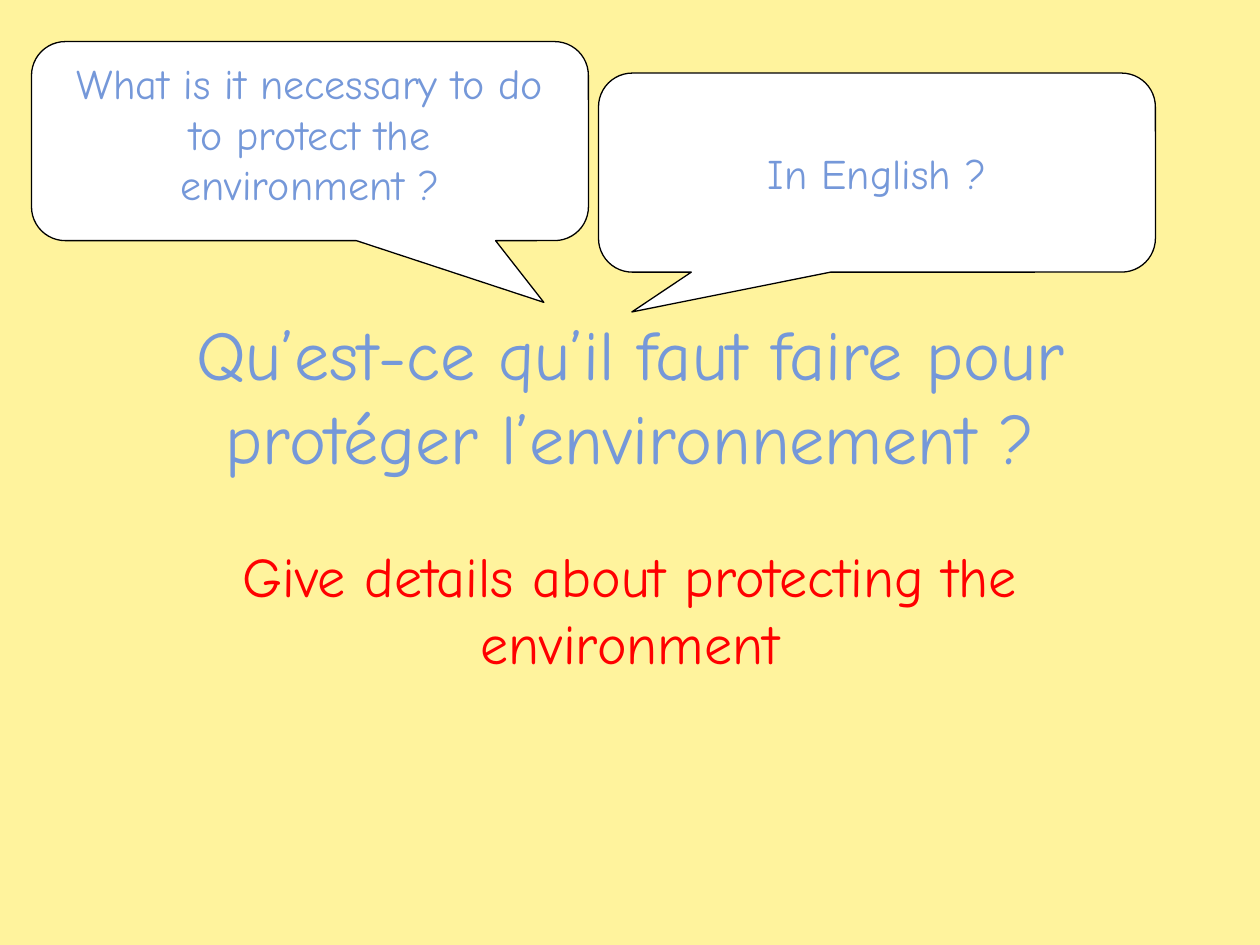
from pptx import Presentation
from pptx.dml.color import RGBColor
from pptx.enum import shapes, text
from pptx.util import Inches, Pt

BLUE, RED = "7598D9", "FF0000"


def rgb(value):
    return RGBColor.from_string(value)


def write(frame, words, size, color, anchor):
    frame.word_wrap = True
    frame.auto_size = text.MSO_AUTO_SIZE.NONE
    frame.vertical_anchor = anchor
    paragraph = frame.paragraphs[0]
    paragraph.alignment = text.PP_ALIGN.CENTER
    run = paragraph.add_run()
    run.text = words
    run.font.name = "Comic Neue"
    run.font.size = Pt(size)
    run.font.color.rgb = rgb(color)


prs = Presentation()
prs.slide_width, prs.slide_height = Inches(10), Inches(7.5)
slide = prs.slides.add_slide(prs.slide_layouts[5])

# Background
slide.background.fill.solid()
slide.background.fill.fore_color.rgb = rgb("FFF39D")

# Question in French
question = slide.shapes.title
question.left, question.top = Inches(0.75), Inches(2.33)
question.width, question.height = Inches(8.5), Inches(1.61)
write(question.text_frame, "Qu’est-ce qu’il faut faire pour protéger l’environnement ?",
      40, BLUE, text.MSO_ANCHOR.MIDDLE)

# Topic below the question
topic = slide.shapes.add_textbox(Inches(1.5), Inches(4.25), Inches(7), Inches(1.92))
write(topic.text_frame, "Give details about protecting the environment",
      32, RED, text.MSO_ANCHOR.TOP)

# Speech bubbles: left, top, tail position, anchor, words
bubbles = [
    (0.25, 0.33, (0.42, 0.81), text.MSO_ANCHOR.TOP,
     "What is it necessary to do to protect the environment ?"),
    (4.75, 0.58, (-0.44, 0.7), text.MSO_ANCHOR.MIDDLE, "In English ?"),
]
for left, top, tail, anchor, words in bubbles:
    bubble = slide.shapes.add_shape(
        shapes.MSO_SHAPE.ROUNDED_RECTANGULAR_CALLOUT,
        Inches(left), Inches(top), Inches(4.42), Inches(1.58))
    bubble.adjustments[0], bubble.adjustments[1] = tail
    bubble.adjustments[2] = 0.17
    bubble.shadow.inherit = False
    bubble.fill.solid()
    bubble.fill.fore_color.rgb = rgb("FFFFFF")
    bubble.line.color.rgb = rgb("000000")
    bubble.line.width = Pt(0.75)
    write(bubble.text_frame, words, 24, BLUE, anchor)

prs.save("out.pptx")
